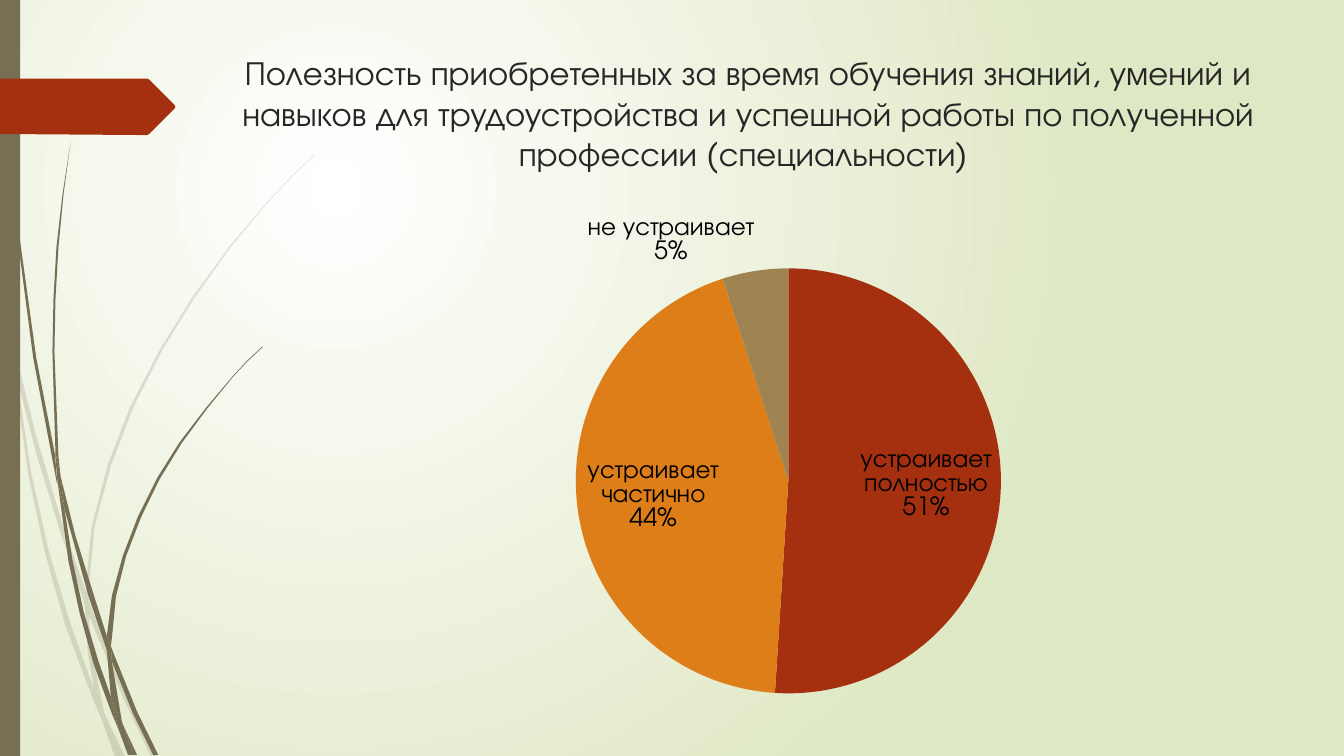
from lxml import etree
from pptx import Presentation
from pptx.chart.data import CategoryChartData
from pptx.dml.color import RGBColor
from pptx.enum.chart import XL_CHART_TYPE, XL_LABEL_POSITION
from pptx.enum.shapes import MSO_SHAPE
from pptx.enum.text import MSO_ANCHOR, PP_ALIGN
from pptx.oxml import parse_xml
from pptx.oxml.ns import qn
from pptx.util import Inches, Pt

PIE = XL_CHART_TYPE.PIE
FIT = XL_LABEL_POSITION.BEST_FIT
RECT = MSO_SHAPE.RECTANGLE
MIDDLE = MSO_ANCHOR.MIDDLE
CENTER = PP_ALIGN.CENTER

CELL = Inches(0.01)
COLS, ROWS = 1333, 750
FONT = "TeX Gyre Adventor"
COLORS = {
    "white": "FFFFFF", "pale": "DFE8C4", "stem": "766F54", "red": "A53010",
    "orange": "DE7E18", "tan": "9F8351", "title": "262626", "label": "000000",
}
TITLE = ("Полезность приобретенных за время обучения знаний, умений и навыков "
         "для трудоустройства и успешной работы по полученной профессии "
         "(специальности) ")
SLICES = [
    ("устраивает полностью", 51, "red"),
    ("устраивает частично", 44, "orange"),
    ("не устраивает", 5, "tan"),
]
PLOT = {"x": 0.378, "y": 0.132, "w": 0.36, "h": 0.84}

FAINT = [
    [(11, 350), (9, 322), (0, 282), (0, 299), (10, 344)],
    [(58, 522), (84, 599), (85, 586), (62, 520), (36, 433), (14, 345),
     (17, 376), (36, 450)],
    [(92, 607), (88, 596), (88, 610), (123, 694), (150, 751), (155, 751),
     (127, 692)],
    [(119, 751), (124, 751), (105, 711)],
    [(93, 683), (70, 619), (48, 545), (31, 469), (17, 376), (11, 350),
     (28, 470), (44, 546), (65, 621), (92, 693), (101, 714), (99, 707)],
    [(84, 599), (87, 646), (93, 683), (96, 692), (105, 711), (103, 706),
     (91, 646), (88, 610), (88, 608)],
    [(88, 584), (94, 522), (110, 462), (132, 405), (160, 349), (192, 297),
     (229, 245), (268, 198), (290, 175), (312, 154), (312, 153), (289, 175),
     (268, 197), (228, 244), (190, 296), (158, 348), (129, 404), (107, 461),
     (91, 522), (85, 584), (85, 586), (88, 596)],
    [(101, 714), (114, 751), (119, 751)],
    [(88, 608), (88, 610), (88, 596), (85, 586), (84, 599)],
    [(96, 692), (93, 683), (99, 707), (101, 714), (119, 751), (105, 711)],
]
DARK = [
    [(7, 110), (17, 233), (33, 355), (56, 477), (57, 481), (55, 457),
     (55, 453), (36, 355), (19, 232), (8, 109), (5, 48), (4, 0), (3, 0),
     (4, 48)],
    [(88, 592), (106, 645), (106, 633), (106, 631), (93, 590), (75, 532),
     (60, 472), (64, 505)],
    [(113, 649), (110, 641), (111, 656), (132, 708), (152, 749), (157, 749),
     (136, 706)],
    [(110, 691), (98, 657), (83, 607), (72, 556), (64, 505), (57, 477),
     (68, 557), (79, 608), (93, 659), (111, 708), (117, 722), (116, 717)],
    [(60, 472), (58, 453), (54, 349), (55, 297), (58, 245), (63, 193),
     (70, 141), (62, 193), (56, 245), (53, 297), (52, 349), (55, 449)],
    [(133, 749), (136, 749), (122, 719)],
    [(57, 477), (64, 505), (60, 472), (55, 449), (55, 453)],
    [(111, 633), (115, 592), (125, 552), (140, 513), (158, 476), (180, 440),
     (205, 406), (231, 374), (245, 359), (261, 344), (260, 344), (245, 358),
     (231, 373), (204, 405), (178, 439), (156, 474), (137, 512), (122, 551),
     (111, 591), (106, 631), (110, 641)],
    [(117, 722), (127, 749), (131, 749)],
    [(106, 645), (110, 691), (116, 706), (122, 719), (121, 716), (111, 656),
     (109, 651)],
    [(106, 645), (109, 651), (111, 656), (110, 641), (106, 631), (106, 633)],
    [(116, 706), (110, 691), (116, 717), (117, 722), (130, 749), (133, 749),
     (122, 719)],
]
ARROW = [(173, 108), (148, 133), (146, 134), (136, 134), (0, 133), (0, 78),
         (136, 78), (146, 78), (148, 79), (173, 104), (174, 106)]


def cells(*nums):
    return [num * CELL for num in nums]


def rgb(name):
    return RGBColor.from_string(COLORS[name])


def paint(shape, name):
    shape.fill.solid()
    shape.fill.fore_color.rgb = rgb(name)
    shape.line.fill.background()
    shape.shadow.inherit = False


def add_form(shapes, points, name):
    pen = shapes.build_freeform(*points[0], scale=CELL)
    pen.add_line_segments(points[1:], close=True)
    form = pen.convert_to_shape()
    paint(form, name)
    return form


def add_grass(slide, blades, alpha=None):
    group = slide.shapes.add_group_shape()
    for points in blades:
        blade = add_form(group.shapes, points, "stem")
        if alpha:
            color = blade.fill._xPr.find(".//" + qn("a:srgbClr"))
            etree.SubElement(color, qn("a:alpha"), val=str(alpha * 1000))


def set_back(slide):
    fill = slide.background.fill
    fill.gradient()
    for stop, name in zip(fill.gradient_stops, ("white", "pale")):
        stop.color.rgb = rgb(name)
    grad = slide._element.find(".//" + qn("a:gradFill"))
    grad.replace(grad.find(qn("a:lin")), parse_xml(
        '<a:path xmlns:a="http://schemas.openxmlformats.org/drawingml/2006/main"'
        ' path="circle"><a:fillToRect l="50000" t="50000" r="100000" b="100000"/>'
        '</a:path>'))


def set_font(font, size, name):
    font.name = FONT
    font.size = Pt(size)
    font.color.rgb = rgb(name)


def add_title(slide):
    frame = slide.shapes.add_textbox(*cells(190, 42, 1104, 140)).text_frame
    frame.word_wrap = True
    frame.vertical_anchor = MIDDLE
    line = frame.paragraphs[0]
    line.text = TITLE
    line.alignment = CENTER
    set_font(line.font, 24, "title")


def set_plot(chart):
    area = chart._chartSpace.find(".//" + qn("c:plotArea"))
    for old in area.findall(qn("c:layout")):
        area.remove(old)
    layout = etree.Element(qn("c:layout"))
    manual = etree.SubElement(layout, qn("c:manualLayout"))
    etree.SubElement(manual, qn("c:layoutTarget"), val="inner")
    for axis in "xy":
        etree.SubElement(manual, qn(f"c:{axis}Mode"), val="edge")
    for key, share in PLOT.items():
        etree.SubElement(manual, qn(f"c:{key}"), val=str(share))
    area.insert(0, layout)


def add_pie(slide):
    data = CategoryChartData()
    data.categories = [label for label, _, _ in SLICES]
    data.add_series("Series 1", [value for _, value, _ in SLICES])
    chart = slide.shapes.add_chart(PIE, *cells(128, 200, 1172, 502), data).chart
    chart.has_title = False
    chart.has_legend = False
    set_font(chart.font, 18, "label")
    plot = chart.plots[0]
    plot.vary_by_categories = True
    for index, (_, _, name) in enumerate(SLICES):
        fill = plot.series[0].points[index].format.fill
        fill.solid()
        fill.fore_color.rgb = rgb(name)
    labels = plot.series[0].data_labels
    labels.show_value = False
    labels.show_category_name = True
    labels.show_percentage = True
    labels.position = FIT
    set_font(labels.font, 18, "label")
    mark = labels._element.find(qn("c:showBubbleSize"))
    split = etree.Element(qn("c:separator"))
    split.text = "\n"
    mark.addnext(split)
    set_plot(chart)


def main():
    deck = Presentation()
    deck.slide_width, deck.slide_height = cells(COLS, ROWS)
    slide = deck.slides.add_slide(deck.slide_layouts[6])
    set_back(slide)
    add_grass(slide, FAINT, alpha=20)
    add_grass(slide, DARK)
    paint(slide.shapes.add_shape(RECT, *cells(0, 0, 20, ROWS)), "stem")
    add_form(slide.shapes, ARROW, "red")
    add_title(slide)
    add_pie(slide)
    deck.save("out.pptx")


if __name__ == "__main__":
    main()
